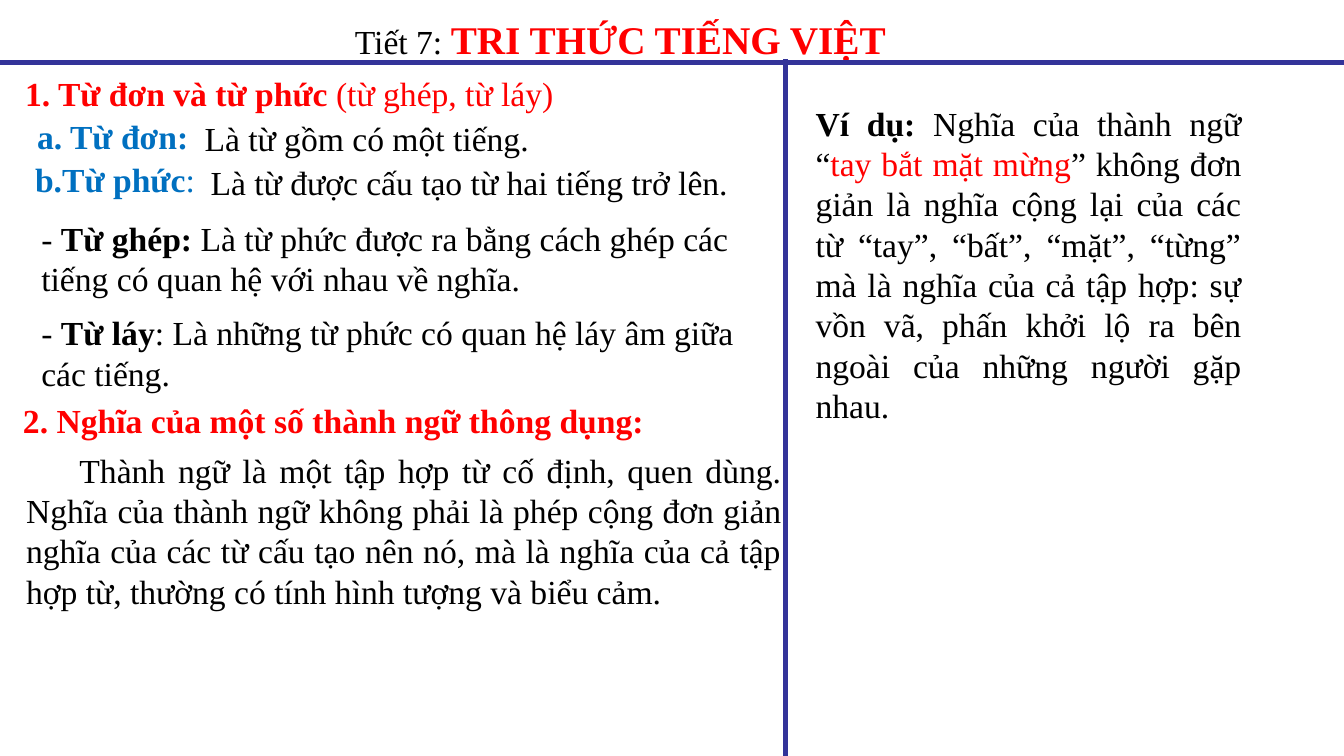
from pptx import Presentation
from pptx.dml.color import RGBColor
from pptx.enum.shapes import MSO_CONNECTOR
from pptx.enum.text import MSO_ANCHOR, MSO_AUTO_SIZE, PP_ALIGN
from pptx.oxml.ns import qn
from pptx.util import Inches, Pt
from lxml import etree

LEFT, JUST = PP_ALIGN.LEFT, PP_ALIGN.JUSTIFY
TOP = MSO_ANCHOR.TOP
GROW = MSO_AUTO_SIZE.SHAPE_TO_FIT_TEXT
STRAIGHT = MSO_CONNECTOR.STRAIGHT
FONT = "Times New Roman"
BLACK, RED, BLUE, NAVY = "000000", "FF0000", "0070C0", "333399"


def paint(color, value):
    color.rgb = RGBColor.from_string(value)


def write(shape, box, paras, wrap=True, align=LEFT, indent=0, **form):
    """Place a shape and fill it; a run is (text, colour, bold[, size])."""
    shape.left, shape.top, shape.width, shape.height = map(Inches, box)
    frame = shape.text_frame
    frame.word_wrap, frame.auto_size = wrap, GROW
    frame.vertical_anchor = TOP
    for i, runs in enumerate(paras):
        para = frame.add_paragraph() if i else frame.paragraphs[0]
        look = {"alignment": align, "line_spacing": 1.0,
                "space_before": Pt(0), "space_after": Pt(0)}
        for key, value in (look | form).items():
            setattr(para, key, value)
        props = para._p.get_or_add_pPr()
        props.set("marL", "0")
        props.set("indent", str(Inches(indent)))
        etree.SubElement(props, qn("a:buNone"))
        for text, color, bold, *size in runs:
            run = para.add_run()
            run.text = text
            font = run.font
            font.name, font.bold = FONT, bold
            font.size = Pt(size[0] if size else 24)
            paint(font.color, color)


deck = Presentation()
deck.slide_width, deck.slide_height = Inches(13.33), Inches(7.5)
slide = deck.slides.add_slide(deck.slide_layouts[1])
title, body = slide.placeholders

write(title, (3.42, 0.1, 5.52, 0.57),
      [[("Tiết 7: ", BLACK, False), ("TRI THỨC TIẾNG VIỆT", RED, True, 28)]],
      wrap=False)

write(body, (0.31, 2.11, 7.12, 1.86), [
    [("- ", BLACK, False), ("Từ ghép: ", BLACK, True),
     ("Là từ phức được ra bằng cách ghép các tiếng có quan hệ với nhau "
      "về nghĩa.", BLACK, False)],
    [("- ", BLACK, False), ("Từ láy", BLACK, True),
     (": Là những từ phức có quan hệ láy âm giữa các tiếng.", BLACK, False)],
], space_after=Pt(10))

# Box, runs, format
notes = [
    ((0.15, 0.61, 7.75, 0.57),
     [("1. Từ đơn và từ phức ", RED, True),
      ("(từ ghép, từ láy)", RED, False)], {"line_spacing": 1.15}),
    ((0.27, 1.1, 1.8, 0.5), [("a. Từ đơn:", BLUE, True)], {"wrap": False}),
    ((1.93, 1.12, 3.42, 0.5),
     [("Là từ gồm có một tiếng.", BLACK, False)], {"wrap": False}),
    ((0.25, 1.53, 1.8, 0.5),
     [("b.Từ phức", BLUE, True), (":", BLUE, False)], {"wrap": False}),
    ((1.99, 1.56, 5.44, 0.5),
     [("Là từ được cấu tạo từ hai tiếng trở lên.", BLACK, False)],
     {"wrap": False}),
    ((0.13, 3.92, 6.67, 0.5),
     [("2. Nghĩa của một số thành ngữ thông dụng:", RED, True)], {}),
    ((0.16, 4.41, 7.69, 1.72),
     [("Thành ngữ là một tập hợp từ cố định, quen dùng. Nghĩa của thành ngữ "
       "không phải là phép cộng đơn giản nghĩa của các từ cấu tạo nên nó, mà "
       "là nghĩa của cả tập hợp từ, thường có tính hình tượng và biểu cảm.",
       BLACK, False)], {"align": JUST, "indent": 0.53}),
    ((7.99, 0.97, 4.42, 3.33),
     [("Ví dụ: ", BLACK, True), ("Nghĩa của thành ngữ “", BLACK, False),
      ("tay bắt mặt mừng", RED, False),
      ("” không đơn giản là nghĩa cộng lại của các từ “tay”, “bất”, “mặt”, "
       "“từng” mà là nghĩa của cả tập hợp: sự vồn vã, phấn khởi lộ ra bên "
       "ngoài của những người gặp nhau.", BLACK, False)], {"align": JUST}),
]
for box, runs, form in notes:
    write(slide.shapes.add_textbox(*map(Inches, box)), box, [runs], **form)

for ends in [(13.33, 0.62, 0, 0.62), (7.79, 0.59, 7.79, 7.5)]:
    rule = slide.shapes.add_connector(STRAIGHT, *map(Inches, ends))
    rule.line.width = Pt(3)
    paint(rule.line.color, NAVY)
    etree.SubElement(rule._element.spPr, qn("a:effectLst"))

deck.save("out.pptx")
